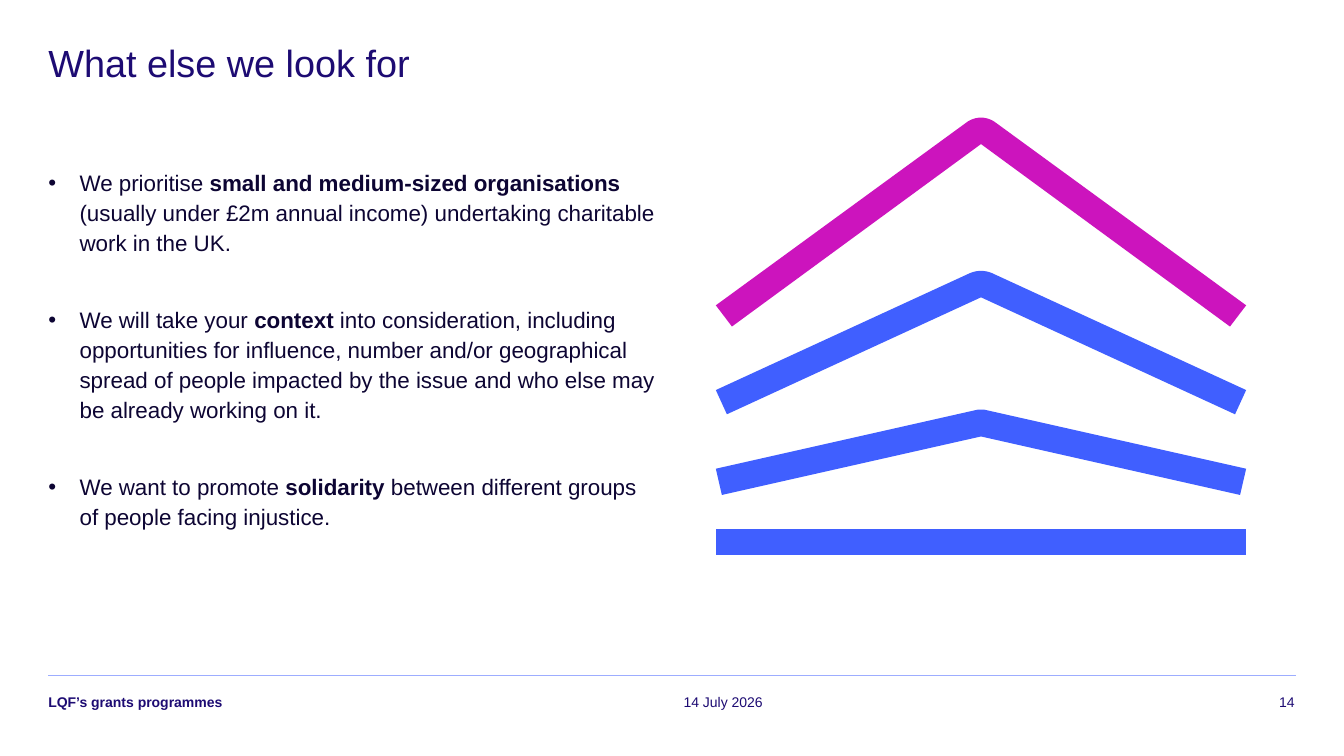
from lxml import etree
from pptx import Presentation
from pptx.dml.color import RGBColor
from pptx.enum.shapes import MSO_CONNECTOR
from pptx.enum.text import PP_ALIGN
from pptx.oxml.ns import qn
from pptx.util import Inches, Pt

INDIGO = RGBColor(0x1D, 0x0B, 0x73)
INK = RGBColor(0x0D, 0x05, 0x33)
BLUE = RGBColor(0x40, 0x5F, 0xFF)
MAGENTA = RGBColor(0xCC, 0x14, 0xBD)
PALE_BLUE = RGBColor(0x9D, 0xAD, 0xFF)
FONT = "Arial"

# Content
TITLE = "What else we look for"
BULLETS = [
    ("We prioritise ", "small and medium-sized organisations",
     " (usually under £2m annual income) undertaking charitable work in the UK."),
    ("We will take your ", "context",
     " into consideration, including opportunities for influence, number and/or "
     "geographical spread of people impacted by the issue and who else may be "
     "already working on it."),
    ("We want to promote ", "solidarity",
     " between different groups of people facing injustice."),
]
# Footer: text, left, width, bold, alignment
FOOTER = [
    ("LQF’s grants programmes", 0.48, 6.06, True, PP_ALIGN.LEFT),
    ("14 July 2026", 6.78, 5.58, False, PP_ALIGN.LEFT),
    ("14", 12.36, 0.48, False, PP_ALIGN.RIGHT),
]
# Chevrons: colour, left half from the inner apex round to the start of the
# rounded tip, then the control point of that tip
CHEVRONS = [
    (BLUE, [(9.73, 4.33), (7.16, 4.91), (7.1, 4.65), (9.67, 4.07)], (9.71, 4.06)),
    (BLUE, [(9.73, 2.95), (7.21, 4.11), (7.1, 3.87), (9.62, 2.71)], (9.69, 2.68)),
    (MAGENTA, [(9.73, 1.43), (7.26, 3.24), (7.1, 3.03), (9.58, 1.22)], (9.67, 1.15)),
]
BASE = [(7.1, 5.25), (12.36, 5.25), (12.36, 5.51), (7.1, 5.51)]
AXIS = 9.73
CURVE_STEPS = 12

deck = Presentation()
deck.slide_width, deck.slide_height = Inches(13.33), Inches(7.5)
page = deck.slides.add_slide(deck.slide_layouts[6])


def add_frame(left, top, width, height):
    frame = page.shapes.add_textbox(
        Inches(left), Inches(top), Inches(width), Inches(height)).text_frame
    frame.word_wrap = True
    frame.margin_left = frame.margin_right = 0
    frame.margin_top = frame.margin_bottom = 0
    return frame


def set_font(para, size, color, bold=None):
    para.font.name, para.font.size, para.font.bold = FONT, Pt(size), bold
    para.font.color.rgb = color


def add_outline(points, color):
    builder = page.shapes.build_freeform(
        Inches(points[0][0]), Inches(points[0][1]))
    builder.add_line_segments(
        [(Inches(x), Inches(y)) for x, y in points[1:]], close=True)
    shape = builder.convert_to_shape()
    shape.shadow.inherit = False
    shape.fill.solid()
    shape.fill.fore_color.rgb = color
    shape.line.fill.background()


def mirror(point):
    return 2 * AXIS - point[0], point[1]


def round_tip(start, control):
    """Points on the symmetric cubic curve that rounds a chevron's tip."""
    corners = (start, control, mirror(control), mirror(start))
    points = []
    for step in range(1, CURVE_STEPS):
        t = step / CURVE_STEPS
        weights = ((1 - t) ** 3, 3 * t * (1 - t) ** 2, 3 * t * t * (1 - t), t ** 3)
        points.append(tuple(
            sum(weight * corner[axis] for weight, corner in zip(weights, corners))
            for axis in (0, 1)))
    return points


# Title
title = add_frame(0.48, 0.44, 12.36, 0.42).paragraphs[0]
title.text = TITLE
title.line_spacing = 0.92
set_font(title, 27, INDIGO)

# Bullet list
body = add_frame(0.48, 1.65, 6.06, 4.74)
for index, parts in enumerate(BULLETS):
    para = body.add_paragraph() if index else body.paragraphs[0]
    para.line_spacing = 1.11
    if index < len(BULLETS) - 1:
        para.space_after = Pt(34)
    properties = para._p.get_or_add_pPr()
    properties.set("marL", str(Inches(0.31)))
    properties.set("indent", str(-Inches(0.31)))
    etree.SubElement(properties, qn("a:buFont")).set("typeface", FONT)
    etree.SubElement(properties, qn("a:buChar")).set("char", "•")
    set_font(para, 16, INK)
    for position, text in enumerate(parts):
        span = para.add_run()
        span.text = text
        span.font.bold = position == 1

# Layered roof
add_outline(BASE, BLUE)
for color, half, control in CHEVRONS:
    right_half = [mirror(point) for point in reversed(half[1:])]
    add_outline(half + round_tip(half[-1], control) + right_half, color)

# Footer
rule = page.shapes.add_connector(
    MSO_CONNECTOR.STRAIGHT, Inches(0.48), Inches(6.7), Inches(12.85), Inches(6.7))
rule.line.color.rgb = PALE_BLUE
rule.line.width = Pt(1)
etree.SubElement(rule._element.spPr, qn("a:effectLst"))
for text, left, width, bold, alignment in FOOTER:
    para = add_frame(left, 6.88, width, 0.17).paragraphs[0]
    para.text = text
    para.alignment = alignment
    set_font(para, 10, INDIGO, bold)

deck.save("out.pptx")
